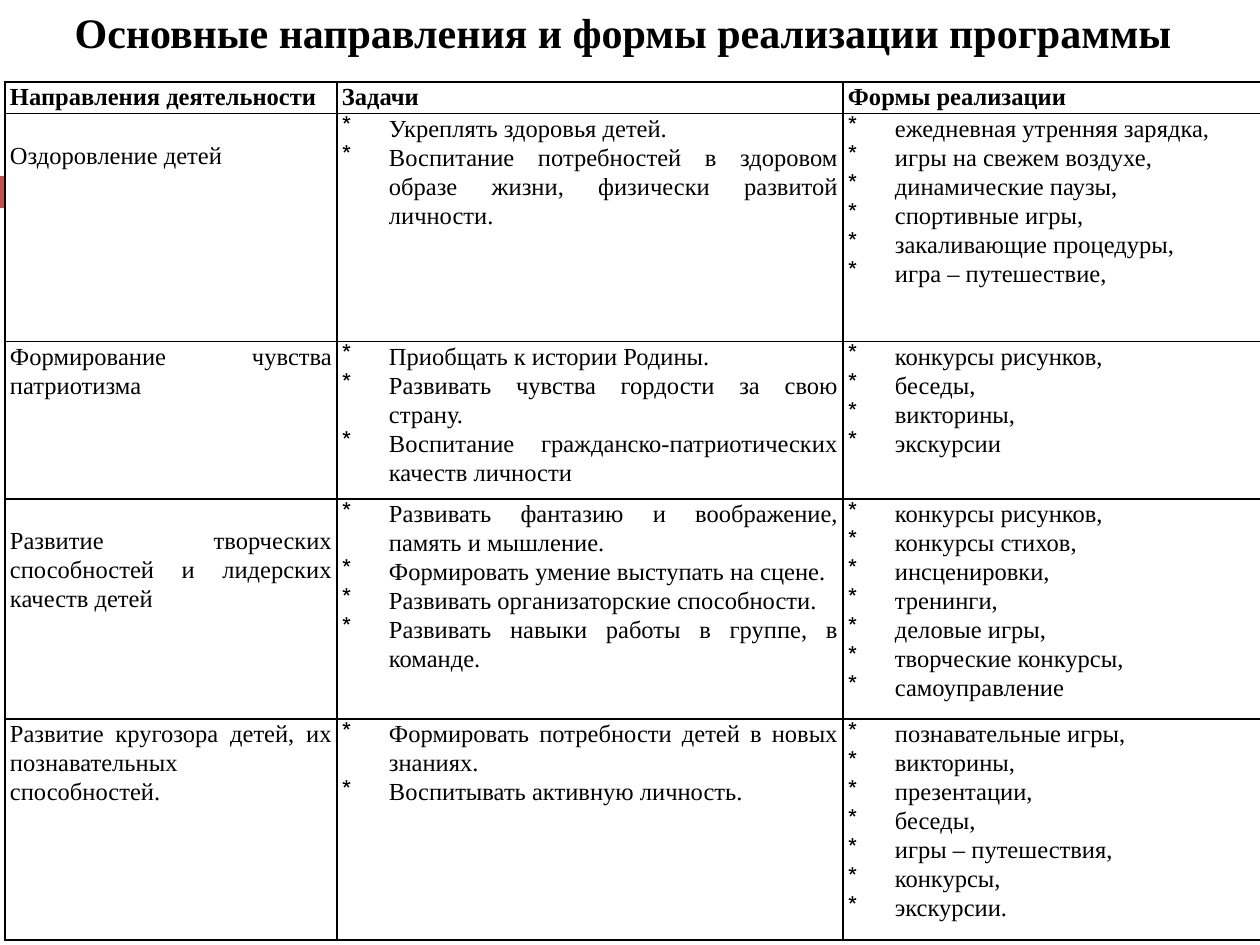
"""Build the slide on the directions and forms of the programme."""
import lxml.etree
import pptx
import pptx.dml.color
import pptx.enum.shapes
import pptx.enum.text
import pptx.oxml.ns
import pptx.util

SCALE = 914400 / 126
WIDTHS = [332, 506, 422]
HEIGHTS = [31, 228, 157, 220, 221]
HEADS = ["Направления деятельности", "Задачи", "Формы реализации"]
ROWS = [
    ("Оздоровление детей", 27,
     ["Укреплять здоровья детей.",
      "Воспитание потребностей в здоровом образе жизни, физически развитой личности."],
     ["ежедневная утренняя зарядка,", "игры на свежем воздухе,",
      "динамические паузы,", "спортивные игры,", "закаливающие процедуры,",
      "игра – путешествие,"]),
    ("Формирование чувства патриотизма", 0,
     ["Приобщать к истории Родины.",
      "Развивать чувства гордости за свою страну.",
      "Воспитание гражданско-патриотических качеств личности"],
     ["конкурсы рисунков,", "беседы,", "викторины,", "экскурсии"]),
    ("Развитие творческих способностей и лидерских качеств детей", 27,
     ["Развивать фантазию и воображение, память и мышление.",
      "Формировать умение выступать на сцене.",
      "Развивать организаторские способности.",
      "Развивать навыки работы в группе, в команде."],
     ["конкурсы рисунков,", "конкурсы стихов,", "инсценировки,", "тренинги,",
      "деловые игры,", "творческие конкурсы,", "самоуправление"]),
    ("Развитие кругозора детей, их познавательных способностей.", 0,
     ["Формировать потребности детей в новых знаниях.",
      "Воспитывать активную личность."],
     ["познавательные игры,", "викторины,", "презентации,", "беседы,",
      "игры – путешествия,", "конкурсы,", "экскурсии."]),
]


def px(count):
    return pptx.util.Emu(round(count * SCALE))


def color(code):
    return pptx.dml.color.RGBColor.from_string(code)


def node(parent, tag, **attrs):
    return lxml.etree.SubElement(parent, pptx.oxml.ns.qn(tag), attrs)


def write(para, text, size=14, bold=False, font="Times New Roman", ink="000000",
          space=None, left=0, first=0, mark=None):
    para.alignment = pptx.enum.text.PP_ALIGN.JUSTIFY
    if space:
        para.line_spacing = space
    run = para.add_run()
    run.text = text
    run.font.name = font
    run.font.size = pptx.util.Pt(size)
    run.font.bold = bold
    run.font.color.rgb = color(ink)
    props = para._p.get_or_add_pPr()
    props.set("marL", str(px(left)))
    props.set("indent", str(px(first)))
    if mark:
        node(props, "a:buChar", char=mark)


class Page:
    """Hold the style and the current slide."""

    def __init__(self, slide, paper="FFFFFF", rule="000000"):
        self.slide = slide
        self.paper = paper
        self.rule = rule

    def title(self, text, x, y, w, h):
        shape = self.slide.shapes.title
        shape.left, shape.top, shape.width, shape.height = map(px, (x, y, w, h))
        frame = shape.text_frame
        frame.word_wrap = True
        frame.auto_size = pptx.enum.text.MSO_AUTO_SIZE.SHAPE_TO_FIT_TEXT
        frame.vertical_anchor = pptx.enum.text.MSO_ANCHOR.MIDDLE
        write(frame.paragraphs[0], text, size=24, bold=True, first=62)

    def bar(self, x, y, w, h, fill):
        shape = self.slide.shapes.add_shape(
            pptx.enum.shapes.MSO_SHAPE.RECTANGLE, *map(px, (x, y, w, h)))
        shape.shadow.inherit = False
        shape.fill.solid()
        shape.fill.fore_color.rgb = color(fill)
        shape.line.fill.background()

    def cell(self, cell, lines, top=0, **style):
        cell.margin_left = cell.margin_right = px(5)
        cell.margin_top, cell.margin_bottom = px(top), 0
        props = cell._tc.get_or_add_tcPr()
        for side in "LRTB":
            line = node(props, f"a:ln{side}", w=str(pptx.util.Pt(1)))
            node(node(line, "a:solidFill"), "a:srgbClr", val=self.rule)
        cell.fill.solid()
        cell.fill.fore_color.rgb = color(self.paper)
        frame = cell.text_frame
        for i, text in enumerate(lines):
            para = frame.add_paragraph() if i else frame.paragraphs[0]
            write(para, text, space=1.07, **style)

    def table(self, x, y, widths, heights, heads, rows):
        grid = self.slide.shapes.add_table(
            len(heights), len(widths), px(x), px(y),
            px(sum(widths)), px(sum(heights))).table
        grid.first_row = grid.horz_banding = False
        for col, width in zip(grid.columns, widths):
            col.width = px(width)
        for row, height in zip(grid.rows, heights):
            row.height = px(height)
        for c, head in enumerate(heads):
            self.cell(grid.cell(0, c), [head], bold=True)
        for r, (name, top, *lists) in enumerate(rows, 1):
            self.cell(grid.cell(r, 0), [name], top=top)
            for c, items in enumerate(lists, 1):
                self.cell(grid.cell(r, c), items, left=47, first=-47, mark="*")


def main():
    deck = pptx.Presentation()
    deck.slide_width, deck.slide_height = px(1260), px(945)
    page = Page(deck.slides.add_slide(deck.slide_layouts.get_by_name("Title Only")))
    page.title("Основные направления и формы реализации программы", 0, 0, 1260, 63)
    page.bar(0, 176, 73, 32, "C0504D")
    page.table(5, 82, WIDTHS, HEIGHTS, HEADS, ROWS)
    deck.save("out.pptx")


if __name__ == "__main__":
    main()
